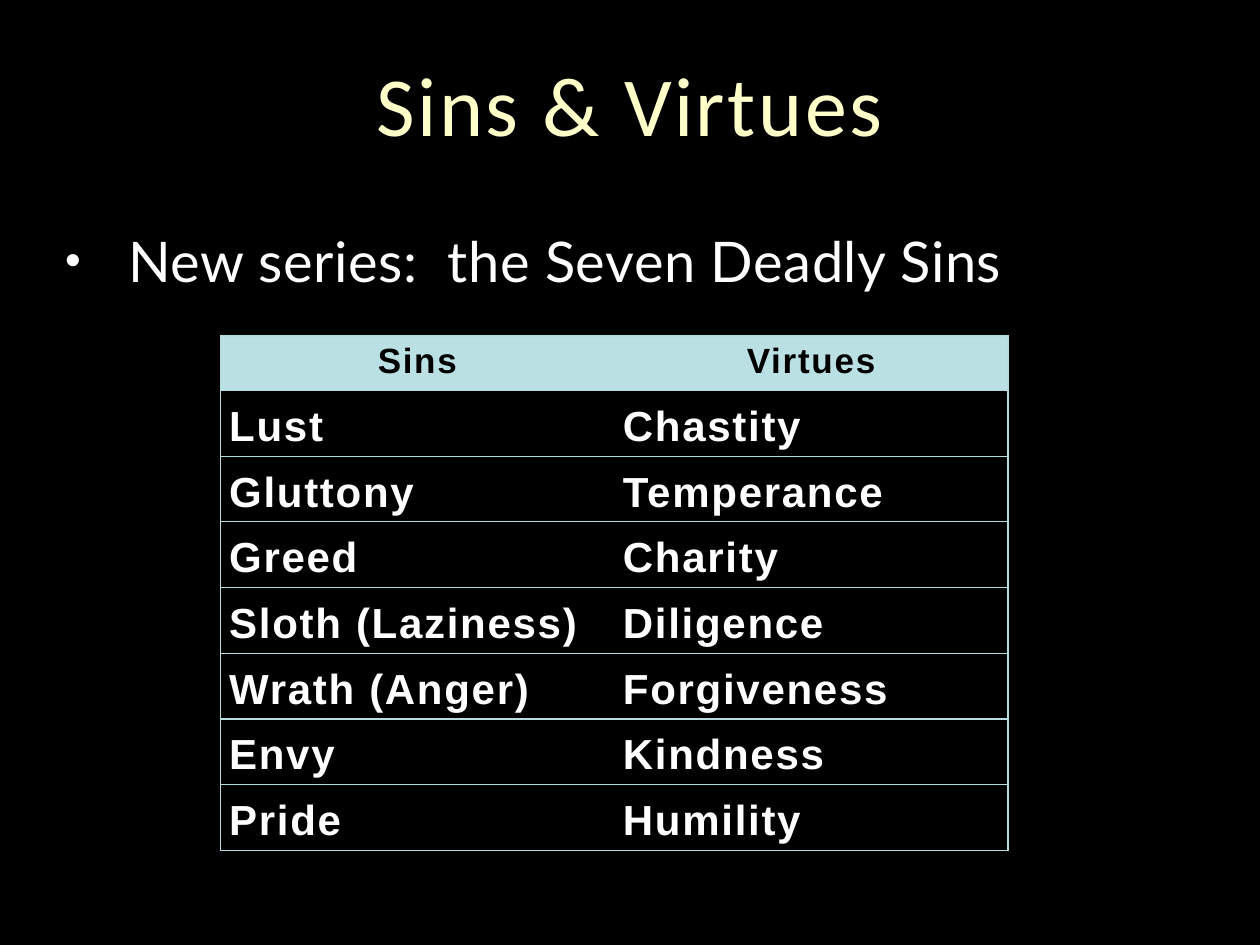
"""Build the Sins & Virtues slide with its two-column table."""
from lxml import etree
from pptx import Presentation
from pptx.dml.color import RGBColor
from pptx.enum.text import MSO_ANCHOR, PP_ALIGN
from pptx.oxml.ns import qn
from pptx.util import Pt

CENTER, LEFT = PP_ALIGN.CENTER, PP_ALIGN.LEFT
MIDDLE, TOP = MSO_ANCHOR.MIDDLE, MSO_ANCHOR.TOP
BORDER = "B6DCDF"
ROWS = [
    ("Sins", "Virtues"),
    ("Lust", "Chastity"),
    ("Gluttony", "Temperance"),
    ("Greed", "Charity"),
    ("Sloth (Laziness)", "Diligence"),
    ("Wrath (Anger)", "Forgiveness"),
    ("Envy", "Kindness"),
    ("Pride", "Humility"),
]


def color(value):
    return RGBColor.from_string(value)


def style(para, font, size, value, spacing, bold=False):
    for span in para.runs:
        span.font.name = font
        span.font.size = Pt(size)
        span.font.bold = bold
        span.font.color.rgb = color(value)
        span.font._element.set("spc", str(round(spacing * 100)))


deck = Presentation()
deck.slide_width, deck.slide_height = Pt(720), Pt(540)
page = deck.slides.add_slide(deck.slide_layouts[5])
page.background.fill.solid()
page.background.fill.fore_color.rgb = color("000000")

title = page.shapes.title
title.left, title.top, title.width, title.height = Pt(0), Pt(21.6), Pt(720), Pt(74.2)
title.text_frame.text = "Sins & Virtues"
title.text_frame.vertical_anchor = MIDDLE
title.text_frame.paragraphs[0].alignment = CENTER
style(title.text_frame.paragraphs[0], "Calibri", 48, "FFFFC9", 1.5)

body = page.shapes.add_textbox(Pt(30.2), Pt(126), Pt(689.8), Pt(482.4 - 126))
body.text_frame.word_wrap = True
body.text_frame.text = "New series:  the Seven Deadly Sins"
para = body.text_frame.paragraphs[0]
para.space_before = Pt(36)
style(para, "Lato", 32, "FFFFFF", 0.3)
properties = para._p.get_or_add_pPr()
properties.set("marL", str(Pt(36)))
properties.set("indent", str(Pt(-36)))
etree.SubElement(properties, qn("a:buSzPct")).set("val", "80000")
etree.SubElement(properties, qn("a:buFont")).set("typeface", "Arial")
etree.SubElement(properties, qn("a:buChar")).set("char", "•")

frame = page.shapes.add_table(len(ROWS), 2, Pt(126), Pt(192), Pt(450), Pt(294))
table = frame.table
table.horz_banding = False
for column in table.columns:
    column.width = Pt(225)

for row_index, words in enumerate(ROWS):
    header = row_index == 0
    table.rows[row_index].height = Pt(31.2 if header else 37.55)
    for column_index, word in enumerate(words):
        cell = table.cell(row_index, column_index)
        cell.margin_left = cell.margin_right = Pt(5)
        cell.margin_top = cell.margin_bottom = Pt(0)
        cell.vertical_anchor = TOP if header else MIDDLE
        cell.text_frame.text = word
        para = cell.text_frame.paragraphs[0]
        para.alignment = CENTER if header else LEFT
        para.line_spacing = 1.15
        para.space_before = Pt(4)
        style(para, "Arial", 20 if header else 24, "000000" if header else "FFFFFF", 1, True)
        cell.fill.solid()
        cell.fill.fore_color.rgb = color("BAE0E3" if header else "000000")
        inner_side = "R" if column_index == 0 else "L"
        for position, side in enumerate("LRTB"):
            line = etree.Element(qn(f"a:ln{side}"), w=str(Pt(0.75)))
            if side == inner_side:
                etree.SubElement(line, qn("a:noFill"))
            else:
                fill = etree.SubElement(line, qn("a:solidFill"))
                etree.SubElement(fill, qn("a:srgbClr")).set("val", BORDER)
            cell._tc.get_or_add_tcPr().insert(position, line)

deck.save("out.pptx")
